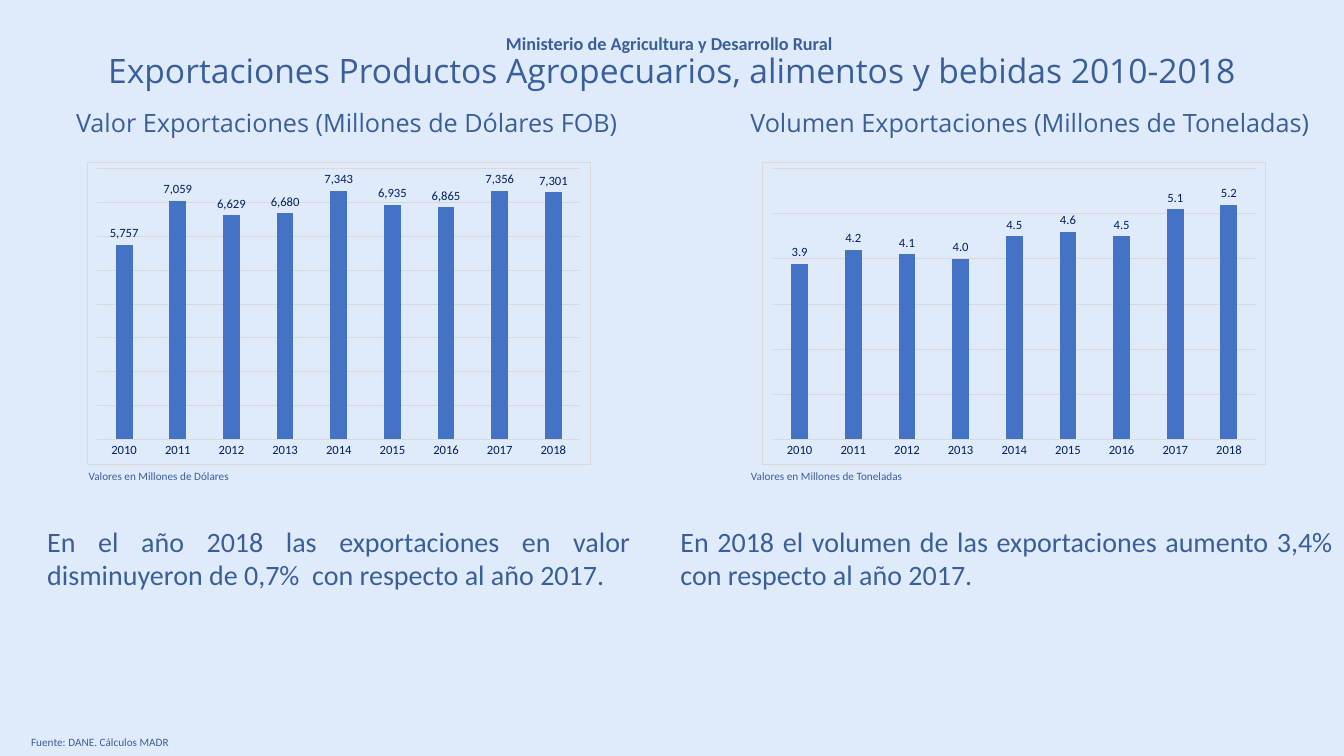
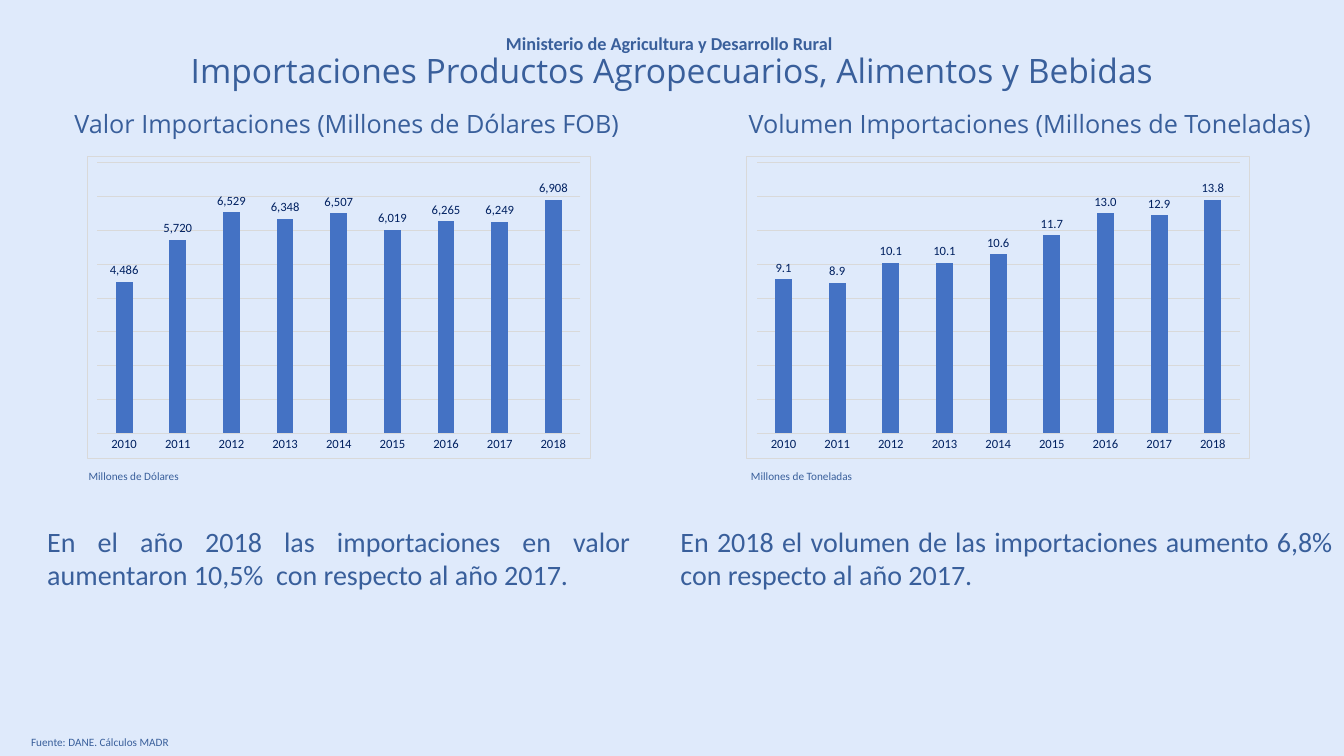
import pptx
import pptx.chart.data
import pptx.dml.color
import pptx.enum.chart
import pptx.enum.text
import pptx.oxml
import pptx.oxml.ns
import pptx.util

Inches = pptx.util.Inches
Pt = pptx.util.Pt
RGBColor = pptx.dml.color.RGBColor
ALIGN = pptx.enum.text.PP_ALIGN

BACKGROUND = RGBColor(0xDF, 0xEA, 0xFB)
TEXT = RGBColor(0x39, 0x5F, 0x9B)
NAVY = RGBColor(0x00, 0x20, 0x60)
GRID = RGBColor(0xD9, 0xD9, 0xD9)
BAR = RGBColor(0x44, 0x72, 0xC4)
BODY_FONT = "Calibri"
TITLE_FONT = "Open Sans"
YEARS = [str(year) for year in range(2010, 2019)]

SLIDES = [
    {
        "title": "Exportaciones Productos Agropecuarios, alimentos y bebidas 2010-2018",
        "heading_top": 1.02,
        "chart_top": 1.61,
        "panels": [
            {
                "heading": "Valor Exportaciones (Millones de Dólares FOB)",
                "heading_box": (0.44, 6),
                "chart_left": 0.86,
                "values": [5757, 7059, 6629, 6680, 7343, 6935, 6865, 7356, 7301],
                "scale": (8000, 1000, "#,##0"),
                "unit": "Valores en Millones de Dólares",
                "note": "En el año 2018 las exportaciones en valor disminuyeron de 0,7%  con respecto al año 2017.",
            },
            {
                "heading": "Volumen Exportaciones (Millones de Toneladas)",
                "heading_box": (7.12, 6.19),
                "chart_left": 7.56,
                "values": [3.9, 4.2, 4.1, 4.0, 4.5, 4.6, 4.5, 5.1, 5.2],
                "scale": (6, 1, "#,##0.0"),
                "unit": "Valores en Millones de Toneladas",
                "note": "En 2018 el volumen de las exportaciones aumento 3,4% con respecto al año 2017.",
            },
        ],
    },
    {
        "title": "Importaciones Productos Agropecuarios, Alimentos y Bebidas",
        "heading_top": 1.03,
        "chart_top": 1.55,
        "panels": [
            {
                "heading": "Valor Importaciones (Millones de Dólares FOB)",
                "heading_box": (0.43, 6.02),
                "chart_left": 0.86,
                "values": [4486, 5720, 6529, 6348, 6507, 6019, 6265, 6249, 6908],
                "scale": (8000, 1000, "#,##0"),
                "unit": "Millones de Dólares",
                "note": "En el año 2018 las importaciones en valor aumentaron 10,5%  con respecto al año 2017.",
            },
            {
                "heading": "Volumen Importaciones (Millones de Toneladas)",
                "heading_box": (7.11, 6.21),
                "chart_left": 7.4,
                "values": [9.1, 8.9, 10.1, 10.1, 10.6, 11.7, 13.0, 12.9, 13.8],
                "scale": (16, 2, "#,##0.0"),
                "unit": "Millones de Toneladas",
                "note": "En 2018 el volumen de las importaciones aumento 6,8% con respecto al año 2017.",
            },
        ],
    },
]

COLUMNS = [
    {"unit_left": 0.78, "note_left": 0.37, "note_width": 5.98},
    {"unit_left": 7.35, "note_left": 6.65, "note_width": 6.67},
]


def add_text(slide, text, box, size, font=BODY_FONT, bold=False, align=ALIGN.JUSTIFY, wrap=True):
    sp = slide.shapes.add_textbox(*map(Inches, box))
    tf = sp.text_frame
    tf.word_wrap = wrap
    tf.auto_size = pptx.enum.text.MSO_AUTO_SIZE.SHAPE_TO_FIT_TEXT
    p = tf.paragraphs[0]
    p.alignment = align
    r = p.add_run()
    r.text = text
    format_font(r.font, size, TEXT, font)
    r.font.bold = bold
    return sp


def format_font(font, size, color, name=BODY_FONT):
    font.size = Pt(size)
    font.name = name
    font.color.rgb = color


def format_line(line):
    line.color.rgb = GRID
    line.width = Pt(0.75)


def add_chart_border(chart):
    border = pptx.oxml.parse_xml(
        f"<c:spPr {pptx.oxml.ns.nsdecls('c', 'a')}><a:noFill/>"
        f'<a:ln w="{Pt(0.75)}"><a:solidFill><a:srgbClr val="{GRID}"/></a:solidFill></a:ln>'
        "</c:spPr>"
    )
    chart.element.find(pptx.oxml.ns.qn("c:chart")).addnext(border)


def add_column_chart(slide, box, values, scale):
    maximum, step, number_format = scale
    data = pptx.chart.data.CategoryChartData(number_format=number_format)
    data.categories = YEARS
    data.add_series("Series 1", values)
    kind = pptx.enum.chart.XL_CHART_TYPE.COLUMN_CLUSTERED
    chart = slide.shapes.add_chart(kind, *map(Inches, box), data).chart
    chart.has_title = False
    chart.has_legend = False
    format_font(chart.font, 10, NAVY)
    add_chart_border(chart)

    years = chart.category_axis
    years.major_tick_mark = pptx.enum.chart.XL_TICK_MARK.NONE
    format_font(years.tick_labels.font, 9, NAVY)
    format_line(years.format.line)

    axis = chart.value_axis
    axis.visible = False
    axis.minimum_scale = 0
    axis.maximum_scale = maximum
    axis.major_unit = step
    axis.has_major_gridlines = True
    format_line(axis.major_gridlines.format.line)

    plot = chart.plots[0]
    plot.gap_width = 219
    plot.overlap = -27
    plot.vary_by_categories = False
    fill = plot.series[0].format.fill
    fill.solid()
    fill.fore_color.rgb = BAR
    labels = plot.series[0].data_labels
    labels.show_value = True
    labels.position = pptx.enum.chart.XL_LABEL_POSITION.OUTSIDE_END
    labels.number_format = number_format
    labels.number_format_is_linked = False
    format_font(labels.font, 9, NAVY)


def add_frame(slide, title):
    fill = slide.background.fill
    fill.solid()
    fill.fore_color.rgb = BACKGROUND
    add_text(slide, "Ministerio de Agricultura y Desarrollo Rural", (4.92, 0.27, 3.49, 0.32), 13,
             bold=True, align=ALIGN.LEFT, wrap=False)
    add_text(slide, title, (0.37, 0.45, 12.59, 0.5), 24, font=TITLE_FONT, align=ALIGN.CENTER)
    add_text(slide, "Fuente: DANE. Cálculos MADR", (0.21, 7.25, 12.91, 0.24), 8)


def add_panel(slide, panel, column, heading_top, chart_top):
    left, width = panel["heading_box"]
    add_text(slide, panel["heading"], (left, heading_top, width, 0.4), 18,
             font=TITLE_FONT, align=ALIGN.CENTER, wrap=False)
    add_column_chart(slide, (panel["chart_left"], chart_top, 5, 3), panel["values"], panel["scale"])
    add_text(slide, panel["unit"], (column["unit_left"], 4.61, 2.55, 0.24), 8)
    add_text(slide, panel["note"], (column["note_left"], 5.15, column["note_width"], 0.77), 20)


def main():
    prs = pptx.Presentation()
    prs.slide_width = Inches(13.33)
    prs.slide_height = Inches(7.5)
    for content in SLIDES:
        s = prs.slides.add_slide(prs.slide_layouts[6])
        add_frame(s, content["title"])
        for panel, column in zip(content["panels"], COLUMNS):
            add_panel(s, panel, column, content["heading_top"], content["chart_top"])
    prs.save("out.pptx")


if __name__ == "__main__":
    main()
